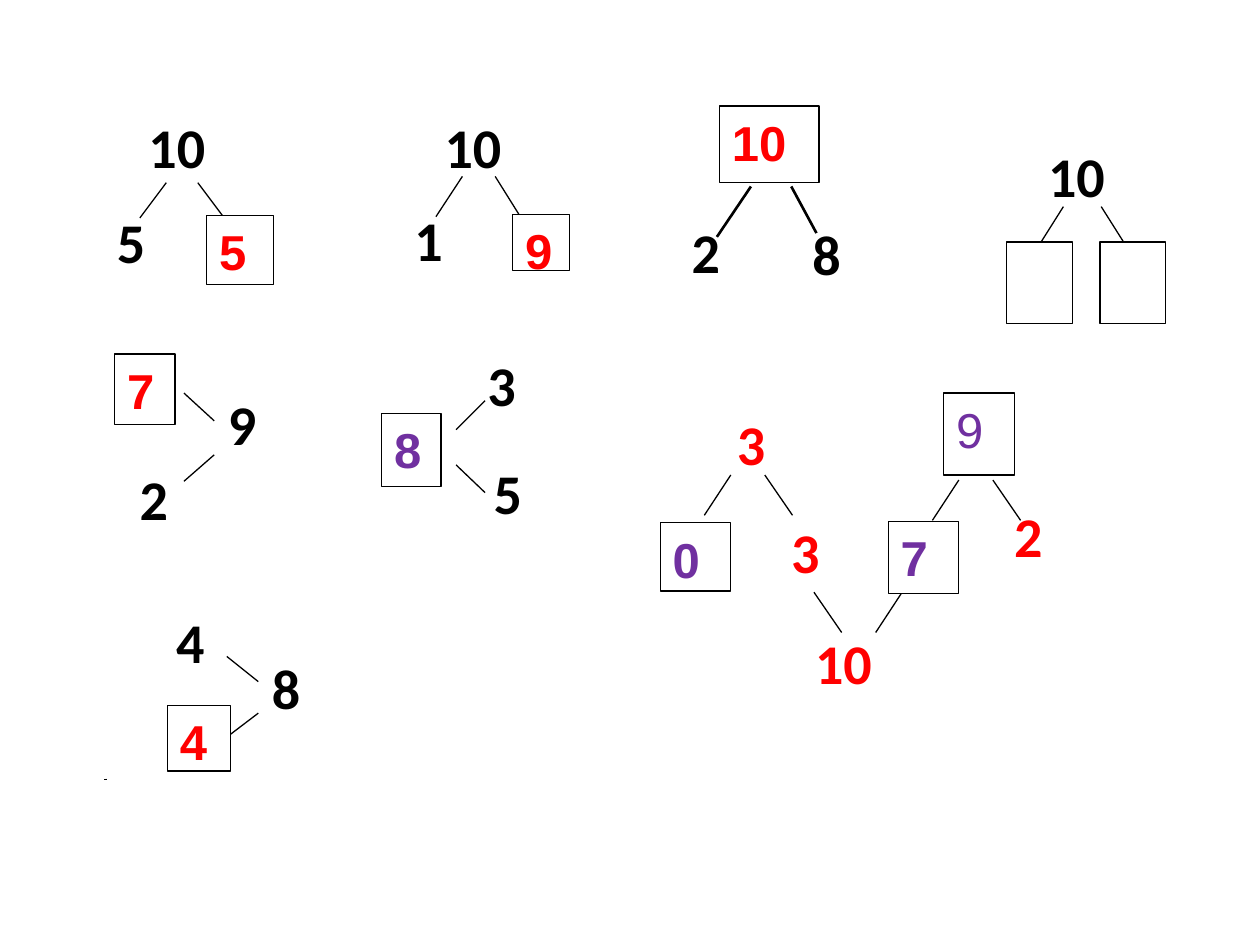
from dataclasses import dataclass, field

from lxml.etree import SubElement
from pptx import Presentation
from pptx.dml.color import RGBColor as Color
from pptx.enum.shapes import MSO_CONNECTOR as Connector, MSO_SHAPE as Shape
from pptx.enum.text import MSO_ANCHOR as Anchor, PP_ALIGN as Align
from pptx.oxml.ns import qn
from pptx.util import Pt

PX = 9144  # EMU per px, 100 px to the inch


@dataclass(frozen=True)
class Theme:
    black: Color = Color(0, 0, 0)
    white: Color = Color(255, 255, 255)
    red: Color = Color(255, 0, 0)
    purple: Color = Color(0x70, 0x30, 0xA0)
    number_font: str = "Calibri"
    answer_font: str = "Arial"
    number_size: int = 32
    answer_size: int = 28
    thin: float = 0.75
    thick: float = 1.5


THEME = Theme()


@dataclass
class Bond:
    """Numbers and answers are (text, left, top, ...); branches are end points."""
    numbers: list
    number_size: tuple
    answers: list
    branches: list
    number_color: Color = THEME.black
    answer_color: Color = THEME.red
    branch_width: float = THEME.thin
    plain_answers: list = field(default_factory=list)


def write_text(shape, text, *, font, size, color, bold=True, align=Align.LEFT):
    frame = shape.text_frame
    frame.word_wrap = True
    frame.vertical_anchor = Anchor.TOP
    paragraph = frame.paragraphs[0]
    paragraph.alignment = align
    run = paragraph.add_run()
    run.text = text
    run.font.name = font
    run.font.size = Pt(size)
    run.font.bold = bold
    run.font.color.rgb = color


class Worksheet:
    def __init__(self, slide, theme):
        self.slide = slide
        self.theme = theme

    def outline(self, shape, width):
        shape.line.color.rgb = self.theme.black
        shape.line.width = Pt(width)

    def branch(self, shapes, points, width):
        line = shapes.add_connector(Connector.STRAIGHT, *(PX * n for n in points))
        self.outline(line, width)
        SubElement(line._element.spPr, qn("a:effectLst"))

    def number(self, shapes, text, bounds, color):
        box = shapes.add_textbox(*(PX * n for n in bounds))
        write_text(box, text, font=self.theme.number_font, color=color,
                   size=self.theme.number_size, align=Align.JUSTIFY)

    def answer(self, shapes, text, bounds, color, bold):
        box = shapes.add_shape(Shape.RECTANGLE, *(PX * n for n in bounds))
        box.shadow.inherit = False
        box.fill.solid()
        box.fill.fore_color.rgb = self.theme.white
        self.outline(box, self.theme.thin)
        if text:
            write_text(box, text, font=self.theme.answer_font, color=color,
                       size=self.theme.answer_size, bold=bold)

    def bond(self, bond):
        shapes = self.slide.shapes.add_group_shape().shapes
        for points in bond.branches:
            self.branch(shapes, points, bond.branch_width)
        for text, left, top in bond.numbers:
            self.number(shapes, text, (left, top, *bond.number_size), bond.number_color)
        for text, *bounds in bond.answers:
            self.answer(shapes, text, bounds, bond.answer_color,
                        bold=text not in bond.plain_answers)

    def tick(self, left, top, height):
        builder = self.slide.shapes.build_freeform(left, top, scale=PX)
        builder.add_line_segments([(left, top + height)], close=False)
        mark = builder.convert_to_shape()
        mark.shadow.inherit = False
        mark.fill.background()
        self.outline(mark, self.theme.thick)


BONDS = [
    # Top row: ten split downwards
    Bond([("10", 108, 84), ("5", 83, 160)], (93, 73),
         [("5", 164, 171, 53, 55)],
         [(132, 145, 111, 173), (157, 145, 178, 173)]),
    Bond([("10", 343, 84), ("1", 319, 158)], (94, 83),
         [("9", 407, 170, 45, 45)],
         [(367, 140, 346, 172), (393, 140, 413, 172)]),
    Bond([("8", 635, 169), ("2", 539, 168)], (70, 62),
         [("10", 571, 84, 79, 61)],
         [(596, 148, 569, 188), (628, 148, 648, 185)],
         branch_width=THEME.thick),
    Bond([("10", 822, 107)], (87, 71),
         [("", 873, 192, 52, 65), ("", 799, 192, 52, 65)],
         [(844, 164, 820, 202), (874, 164, 898, 202)]),
    # Left side: bonds turned sideways
    Bond([("9", 171, 304), ("2", 101, 364)], (85, 74),
         [("7", 91, 281, 48, 56)],
         [(170, 334, 146, 312), (170, 361, 146, 382)]),
    Bond([("3", 377, 273), ("5", 382, 359)], (83, 78),
         [("8", 303, 328, 47, 58)],
         [(362, 369, 385, 391), (362, 341, 385, 318)],
         answer_color=THEME.purple),
    Bond([("8", 206, 514), ("4", 130, 477)], (89, 69),
         [("4", 133, 560, 50, 52)],
         [(205, 541, 180, 521), (205, 566, 180, 585)]),
    # Right side: chain of three linked bonds
    Bond([("3", 575, 320), ("3", 618, 406), ("10", 637, 494), ("2", 795, 393)], (98, 86),
         [("0", 524, 415, 56, 54), ("7", 705, 414, 56, 57), ("9", 749, 312, 56, 65)],
         [(580, 377, 559, 409), (607, 377, 629, 409),
          (695, 502, 716, 470), (668, 502, 646, 470),
          (761, 381, 740, 413), (788, 381, 810, 413)],
         number_color=THEME.red, answer_color=THEME.purple, plain_answers=["9"]),
]


def main():
    presentation = Presentation()
    presentation.slide_width = 1000 * PX
    presentation.slide_height = 750 * PX
    slide = presentation.slides.add_slide(presentation.slide_layouts[6])
    worksheet = Worksheet(slide, THEME)
    for bond in BONDS:
        worksheet.bond(bond)
    # Small mark at the lower left
    worksheet.tick(84, 618, 1)
    presentation.save("out.pptx")


if __name__ == "__main__":
    main()
